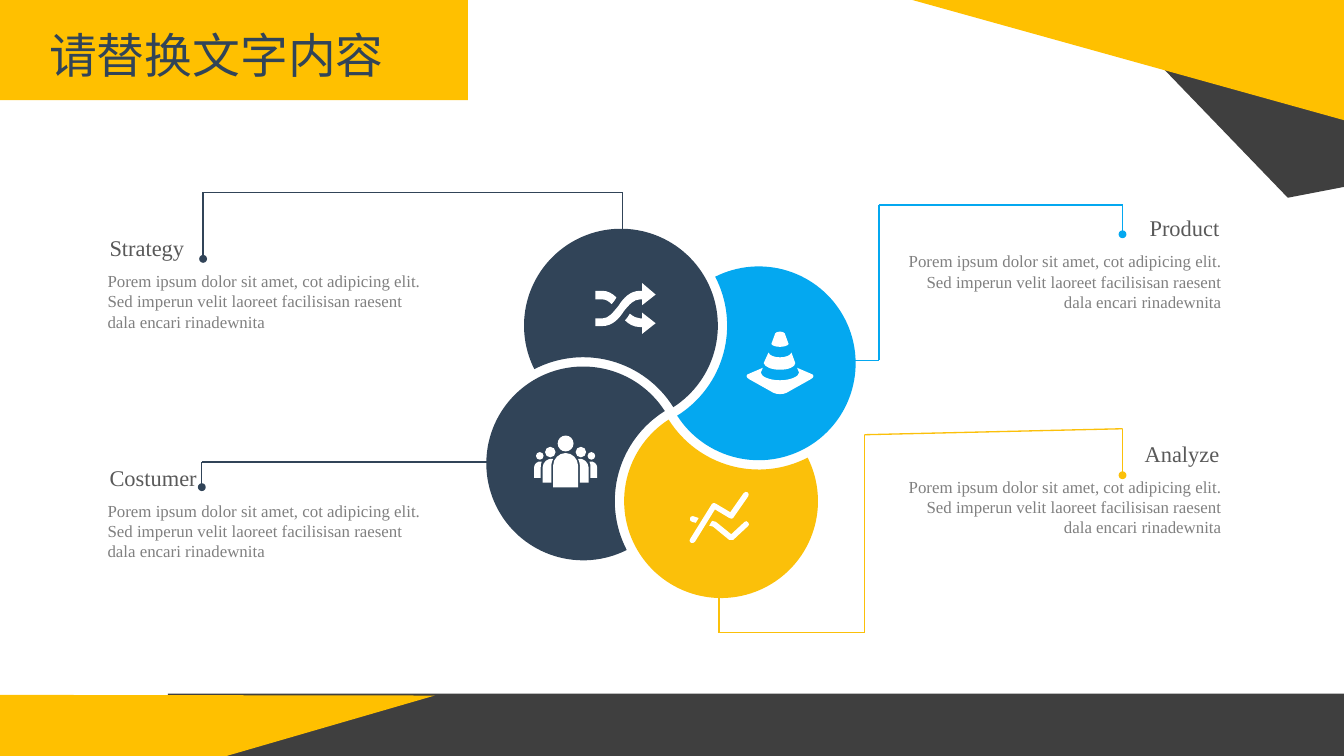
import math

from lxml import etree
from pptx import Presentation
from pptx.dml.color import RGBColor
from pptx.enum import shapes, text
from pptx.oxml import ns
from pptx.util import Pt

AMBER = RGBColor(0xFF, 0xC0, 0x00)
CHARCOAL = RGBColor(0x3F, 0x3F, 0x3F)
NAVY = RGBColor(0x31, 0x44, 0x58)
BLUE = RGBColor(0x04, 0xA8, 0xF0)
GOLD = RGBColor(0xFB, 0xC0, 0x0A)
WHITE = RGBColor(0xFF, 0xFF, 0xFF)
HEADING_GREY = RGBColor(0x59, 0x59, 0x59)
BODY_GREY = RGBColor(0x80, 0x80, 0x80)

SERIF = "Times New Roman"
CHINESE = "Noto Sans CJK SC"
BODY = ("Porem ipsum dolor sit amet, cot adipicing elit. "
        "Sed imperun velit laoreet facilisisan raesent dala encari rinadewnita")

# Name, colour, text left and top, alignment, lead line from petal to text
CALLOUTS = [
    ("Strategy", NAVY, 81, 176, text.PP_ALIGN.LEFT,
     [(469, 179), (469, 145), (153, 145), (153, 195)]),
    ("Product", BLUE, 681, 161, text.PP_ALIGN.RIGHT,
     [(639, 271.5), (662, 271.5), (662, 154.5), (845.5, 154.5), (845.5, 176.5)]),
    ("Analyze", GOLD, 681, 331, text.PP_ALIGN.RIGHT,
     [(541.5, 441), (541.5, 476.5), (651, 476.5), (651, 327.5), (845.5, 323), (845.5, 358)]),
    ("Costumer", NAVY, 81, 349, text.PP_ALIGN.LEFT,
     [(372, 348), (152, 348), (152, 367)]),
]

# Icon contours in hundredths of an inch: a pair is a corner, six numbers a cubic curve
SHUFFLE = [
    [(49, 37), (47, 37), (43, 37, 40, 35, 36, 32), (35, 34, 33, 37, 31, 39),
     (35, 43, 40, 46, 47, 46), (49, 46), (49, 53), (63, 42), (49, 31)],
    [(17, 22), (19, 20, 21, 17, 22, 15), (18, 11, 13, 8, 7, 8),
     (0, 8), (0, 17), (7, 17), (11, 17, 14, 19, 17, 22)],
    [(47, 17), (49, 17), (49, 23), (63, 12), (49, 0), (49, 8), (47, 8), (36, 8, 29, 16, 24, 24),
     (18, 31, 14, 37, 7, 37), (0, 37), (0, 45), (7, 45), (18, 45, 25, 37, 30, 29),
     (36, 22, 40, 17, 47, 17)],
]
CONE = [
    [(67, 44), (53, 38), (55, 43), (55, 47, 46, 51, 35, 51), (24, 51, 15, 47, 15, 43), (17, 38),
     (3, 44), (-1, 45, -1, 48, 3, 50), (28, 64), (32, 66, 38, 66, 42, 64), (67, 50),
     (71, 48, 71, 45, 67, 44)],
    [(35, 16), (39, 16, 43, 15, 44, 13), (40, 2), (40, 1, 37, 0, 35, 0),
     (33, 0, 30, 1, 30, 2), (26, 13), (27, 15, 31, 16, 35, 16)],
    [(35, 40), (44, 40, 51, 37, 51, 33), (47, 22), (46, 25, 41, 27, 35, 27),
     (29, 27, 24, 25, 23, 22), (18, 33), (19, 37, 26, 40, 35, 40)],
]
TRENDS = [
    [(27, 18), (42, 27), (44, 28, 45, 28, 46, 27), (62, 4), (63, 3, 62, 1, 61, 0),
     (60, -1, 58, 0, 57, 1), (43, 21), (28, 12), (27, 11, 25, 11, 24, 12), (1, 49),
     (0, 50, 0, 52, 2, 53), (4, 53, 5, 53, 6, 52)],
    [(58, 31), (44, 44), (28, 31), (24, 30), (21, 35), (25, 36), (42, 50),
     (43, 50, 45, 50, 46, 50), (61, 36), (63, 35, 63, 33, 62, 32), (61, 30, 59, 30, 58, 31)],
    [(3, 31), (7, 32), (10, 27), (4, 25), (2, 25, 1, 26, 1, 27), (0, 29, 1, 30, 3, 31)],
]
PERSON = [(20, 55), (46, 55), (46, 32), (46, 25, 40, 19, 33, 19), (26, 19, 20, 25, 20, 32)]
SIDE_BODIES = [
    [(57, 50), (48, 50), (48, 32), (48, 30, 47, 27, 46, 25), (52, 24, 57, 29, 57, 34)],
    [(66, 45), (59, 45), (59, 34), (59, 32, 59, 30, 58, 28), (63, 27, 66, 31, 66, 34)],
]


def arc(x, y, radius, start, end, pieces):
    """Contour of cubic curves along a circle."""
    step = (end - start) / pieces
    pull = 4 / 3 * math.tan(step / 4)
    contour = [(x + radius * math.cos(start), y + radius * math.sin(start))]
    for i in range(pieces):
        a, b = start + i * step, start + (i + 1) * step
        contour.append((x + radius * (math.cos(a) - pull * math.sin(a)),
                        y + radius * (math.sin(a) + pull * math.cos(a)),
                        x + radius * (math.cos(b) + pull * math.sin(b)),
                        y + radius * (math.sin(b) - pull * math.cos(b)),
                        x + radius * math.cos(b), y + radius * math.sin(b)))
    return contour


def head(x, y, radius):
    return arc(x, y, radius, 0, math.tau, 4)


def people():
    """Contours of one person in the middle and two on each side."""
    side = SIDE_BODIES + [head(49, 18, 5.5), head(60, 22, 4)]
    mirrored = [[tuple(n if i % 2 else 66 - n for i, n in enumerate(step)) for step in contour]
                for contour in side]
    return [PERSON, head(33, 9, 8.3)] + side + mirrored


def paint(shape, colour):
    shape.shadow.inherit = False
    shape.fill.solid()
    shape.fill.fore_color.rgb = colour
    shape.line.fill.background()


def add_outline(page, contours, colour):
    """Freeform of corners and cubic curves."""
    builder = None
    for contour in contours:
        points = [(Pt(step[i]), Pt(step[i + 1])) for step in contour
                  for i in range(0, len(step), 2)]
        if builder is None:
            builder = page.shapes.build_freeform(*points[0])
        else:
            builder.move_to(*points[0])
        builder.add_line_segments(points[1:], close=True)
    shape = builder.convert_to_shape()
    paint(shape, colour)
    outline = shape._element.find(".//" + ns.qn("a:path"))
    segments = iter(outline.findall(ns.qn("a:lnTo")))
    for contour in contours:
        for step in contour[1:]:
            segment = next(segments)
            if len(step) == 6:
                curve = etree.Element(ns.qn("a:cubicBezTo"))
                outline.replace(segment, curve)
                curve.append(segment[0])
                for _ in range(2):
                    extra = next(segments)
                    curve.append(extra[0])
                    outline.remove(extra)


def add_bar(page, left, top, width, height, colour):
    bar = page.shapes.add_shape(shapes.MSO_SHAPE.RECTANGLE,
                                Pt(left), Pt(top), Pt(width), Pt(height))
    paint(bar, colour)


def add_text(page, box, words, size, font, colour, align=text.PP_ALIGN.LEFT, inset=(7.2, 3.6),
             anchor=text.MSO_ANCHOR.TOP):
    frame = page.shapes.add_textbox(*map(Pt, box)).text_frame
    frame.word_wrap = True
    frame.vertical_anchor = anchor
    frame.margin_left = frame.margin_right = Pt(inset[0])
    frame.margin_top = frame.margin_bottom = Pt(inset[1])
    para = frame.paragraphs[0]
    para.text = words
    para.alignment = align
    para.font.size = Pt(size)
    para.font.name = font
    para.font.color.rgb = colour
    return para


def add_frame(page):
    """Title bar, corner triangles and footer."""
    add_bar(page, -1.5, 0, 354, 75.5, AMBER)
    title = add_text(page, (30, 16, 407, 51), "请替换文字内容", 36, CHINESE, NAVY)
    span = title.runs[0]
    span.font.name = CHINESE
    etree.SubElement(span.font._element, ns.qn("a:ea"), typeface=CHINESE)
    add_bar(page, 126.5, 522.5, 887, 48, CHARCOAL)
    add_outline(page, [[(877, 52.5), (970, 149), (1136, 117)]], CHARCOAL)
    add_outline(page, [[(680, -2), (1014, -2), (1014, 91)]], AMBER)
    add_outline(page, [[(0, 523.5), (327.5, 524), (169, 570), (0, 571)]], AMBER)


def add_lead(page, points, colour):
    """Angular line that ends in a dot."""
    for start, end in zip(points, points[1:]):
        line = page.shapes.add_connector(shapes.MSO_CONNECTOR.STRAIGHT,
                                         *map(Pt, start + end))
        line.line.color.rgb = colour
        line.line.width = Pt(1)
        if end == points[-1]:
            etree.SubElement(line.line._get_or_add_ln(), ns.qn("a:tailEnd"), type="oval")
        etree.SubElement(line._element.spPr, ns.qn("a:effectLst"))


def add_callout(page, name, colour, left, top, align, lead):
    width, heading_width, overhang = 239, 167, 6.5
    add_lead(page, lead, colour)
    heading_left = left - overhang
    if align == text.PP_ALIGN.RIGHT:
        heading_left = left + width + overhang - heading_width
    add_text(page, (heading_left, top, heading_width, 21.5), name, 16.9, SERIF, HEADING_GREY,
             align, (8, 3.6), text.MSO_ANCHOR.MIDDLE)
    add_text(page, (left, top + 28, width, 46), BODY, 12.7, SERIF, BODY_GREY, align, (0, 0))


def add_petals(page, x, y):
    """Four discs turned around a centre, each notched by the one before it."""
    radius, notch = 73, 80
    dx, dy = -37.7, -66.1
    centres = [(x + dx, y + dy), (x - dy, y + dx), (x - dx, y - dy), (x + dy, y - dx)]
    gap = math.dist(centres[0], centres[1])
    outer = math.acos((gap ** 2 + radius ** 2 - notch ** 2) / (2 * gap * radius))
    inner = math.acos((gap ** 2 + notch ** 2 - radius ** 2) / (2 * gap * notch))
    for i, callout in enumerate(CALLOUTS):
        centre, cutter = centres[i], centres[i - 1]
        facing = math.atan2(cutter[1] - centre[1], cutter[0] - centre[0])
        back = facing + math.pi
        edge = arc(*centre, radius, facing + outer, facing + math.tau - outer, 6)
        bite = arc(*cutter, notch, back + inner, back - inner, 2)
        add_outline(page, [edge + bite[1:]], callout[1])


def add_icon(page, left, top, contours):
    scale = 0.72
    add_outline(page, [[tuple((top if i % 2 else left) + n * scale for i, n in enumerate(step))
                        for step in contour] for contour in contours], WHITE)


def main():
    deck = Presentation()
    deck.slide_width, deck.slide_height = Pt(1012.3), Pt(569.5)
    page = deck.slides.add_slide(deck.slide_layouts[6])
    add_frame(page)
    for callout in CALLOUTS:
        add_callout(page, *callout)
    add_petals(page, 505.4, 311.4)
    add_icon(page, 448.5, 213.3, SHUFFLE)
    add_icon(page, 562.3, 249.8, CONE)
    add_icon(page, 519.1, 370.8, TRENDS)
    add_icon(page, 402.3, 327.6, people())
    deck.save("out.pptx")


if __name__ == "__main__":
    main()
